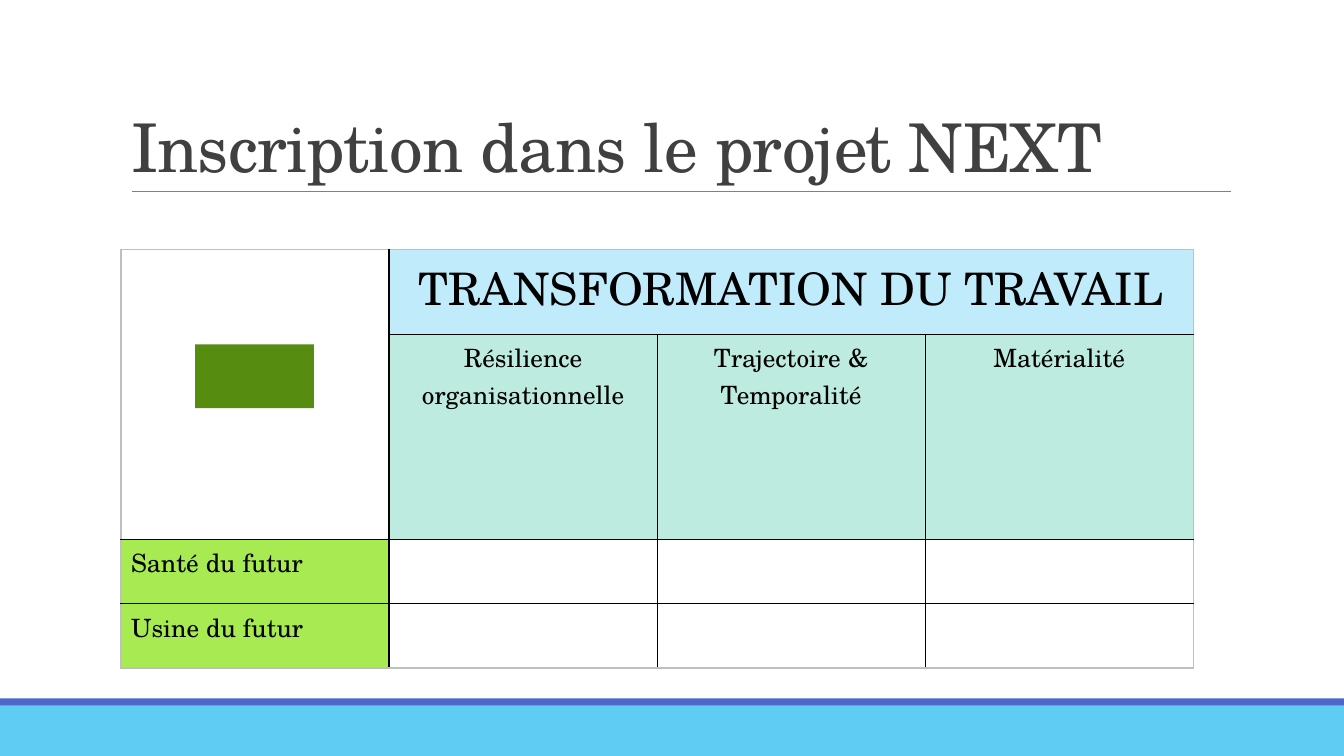
from lxml.etree import SubElement
from pptx import Presentation
from pptx.dml.color import RGBColor
from pptx.enum.shapes import MSO_CONNECTOR, MSO_SHAPE
from pptx.enum.text import MSO_ANCHOR, MSO_AUTO_SIZE, PP_ALIGN
from pptx.oxml import parse_xml
from pptx.oxml.ns import nsdecls, qn
from pptx.util import Pt

FONT = "TeX Gyre Schola"
TITLE = "Inscription dans le projet NEXT"
HEAD = {"size": Pt(32), "bold": False}
BODY = {"size": Pt(18), "bold": False}
MID, LEFT = PP_ALIGN.CENTER, PP_ALIGN.LEFT
CELLS = [
    (0, 1, "TRANSFORMATION DU TRAVAIL", HEAD, "BFEBFA", MID),
    (1, 1, "Résilience organisationnelle", BODY, "BEEBDF", MID),
    (1, 2, "Trajectoire & Temporalité", BODY, "BEEBDF", MID),
    (1, 3, "Matérialité", BODY, "BEEBDF", MID),
    (2, 0, "Santé du futur", BODY, "A7EA52", LEFT),
    (3, 0, "Usine du futur", BODY, "A7EA52", LEFT),
]
MERGES = [((0, 0), (1, 0)), ((0, 1), (0, 3))]
ROWS = [60.5, 146.5, 46, 46]
COLS = [191.5] * 4
TABLE = (86.4, 178.2, sum(COLS), sum(ROWS))
BLOCKS = [
    ((0, 504, 960, 36), "5ECCF3"),
    ((0, 498.9, 960, 5.1), "4E67C8"),
    ((139.3, 246, 85, 45.5), "568D11"),
]


def hue(code):
    return RGBColor.from_string(code)


def pts(nums):
    return [Pt(num) for num in nums]


def apply(item, form):
    for name, value in form.items():
        setattr(item, name, value)


def write(frame, text, form, code, align):
    para = frame.paragraphs[0]
    para.alignment = align
    run = para.add_run()
    run.text = text
    apply(run.font, {"name": FONT, **form})
    run.font.color.rgb = hue(code)
    return para, run


def border(cell, row, col):
    sides = {
        "lnL": col == 0,
        "lnR": col + cell.span_width == len(COLS),
        "lnT": row == 0,
        "lnB": row + cell.span_height == len(ROWS),
    }
    props = cell._tc.get_or_add_tcPr()
    for spot, (tag, outer) in enumerate(sides.items()):
        code = "BFBFBF" if outer else "000000"
        props.insert(spot, parse_xml(
            f'<a:{tag} {nsdecls("a")} w="{Pt(1)}"><a:solidFill>'
            f'<a:srgbClr val="{code}"/></a:solidFill></a:{tag}>'))


def add_block(slide, box, code):
    block = slide.shapes.add_shape(MSO_SHAPE.RECTANGLE, *pts(box))
    block.shadow.inherit = False
    block.fill.solid()
    block.fill.fore_color.rgb = hue(code)
    block.line.fill.background()


def add_title(slide):
    title = slide.shapes.title
    apply(title, dict(zip(("left", "top", "width", "height"),
                          pts((86.4, 22.3, 792, 114.5)))))
    frame = title.text_frame
    apply(frame, {"word_wrap": True, "auto_size": MSO_AUTO_SIZE.NONE,
                  "vertical_anchor": MSO_ANCHOR.BOTTOM})
    para, run = write(frame, TITLE, {"size": Pt(48)}, "404040", LEFT)
    para.line_spacing = 0.85
    run.font._element.set("spc", "-50")


def add_rule(slide):
    rule = slide.shapes.add_connector(
        MSO_CONNECTOR.STRAIGHT, *pts((94.3, 136.8, 879.1, 136.8)))
    rule.line.color.rgb = hue("808080")
    rule.line.width = Pt(0.5)
    SubElement(rule._element.spPr, qn("a:effectLst"))


def add_grid(slide):
    grid = slide.shapes.add_table(len(ROWS), len(COLS), *pts(TABLE)).table
    apply(grid, {"first_row": False, "horz_banding": False})
    for row, high in zip(grid.rows, ROWS):
        row.height = Pt(high)
    for col, wide in zip(grid.columns, COLS):
        col.width = Pt(wide)
    for start, end in MERGES:
        grid.cell(*start).merge(grid.cell(*end))
    fills = {(row, col): fill for row, col, _, _, fill, _ in CELLS}
    for row in range(len(ROWS)):
        for col in range(len(COLS)):
            cell = grid.cell(row, col)
            cell.fill.solid()
            cell.fill.fore_color.rgb = hue(fills.get((row, col), "FFFFFF"))
            border(cell, row, col)
    for row, col, text, form, _, align in CELLS:
        write(grid.cell(row, col).text_frame, text, form, "000000", align)


def main():
    deck = Presentation()
    apply(deck, {"slide_width": Pt(960), "slide_height": Pt(540)})
    slide = deck.slides.add_slide(deck.slide_layouts[5])
    add_title(slide)
    add_rule(slide)
    add_grid(slide)
    for box, code in BLOCKS:
        add_block(slide, box, code)
    deck.save("out.pptx")


if __name__ == "__main__":
    main()
